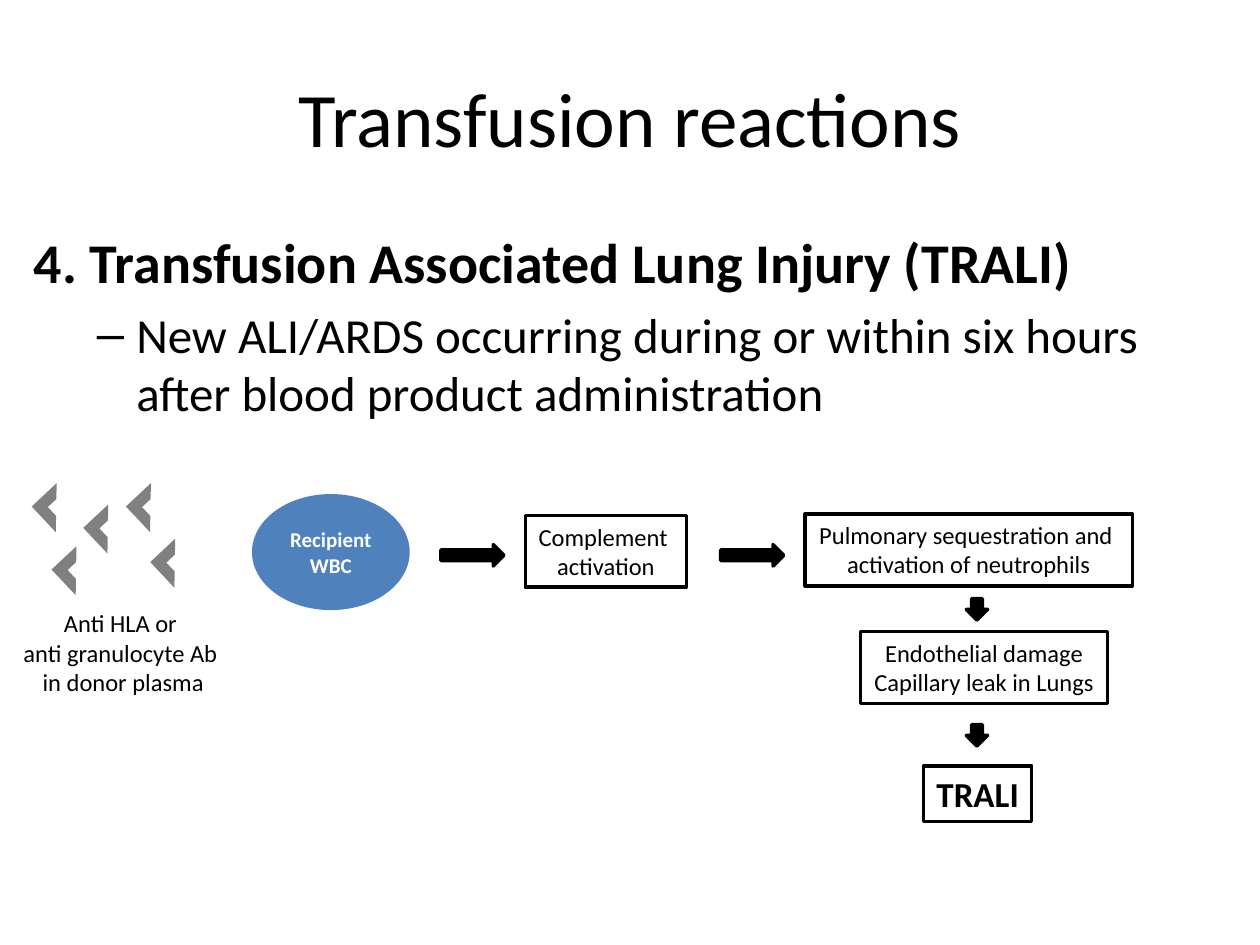
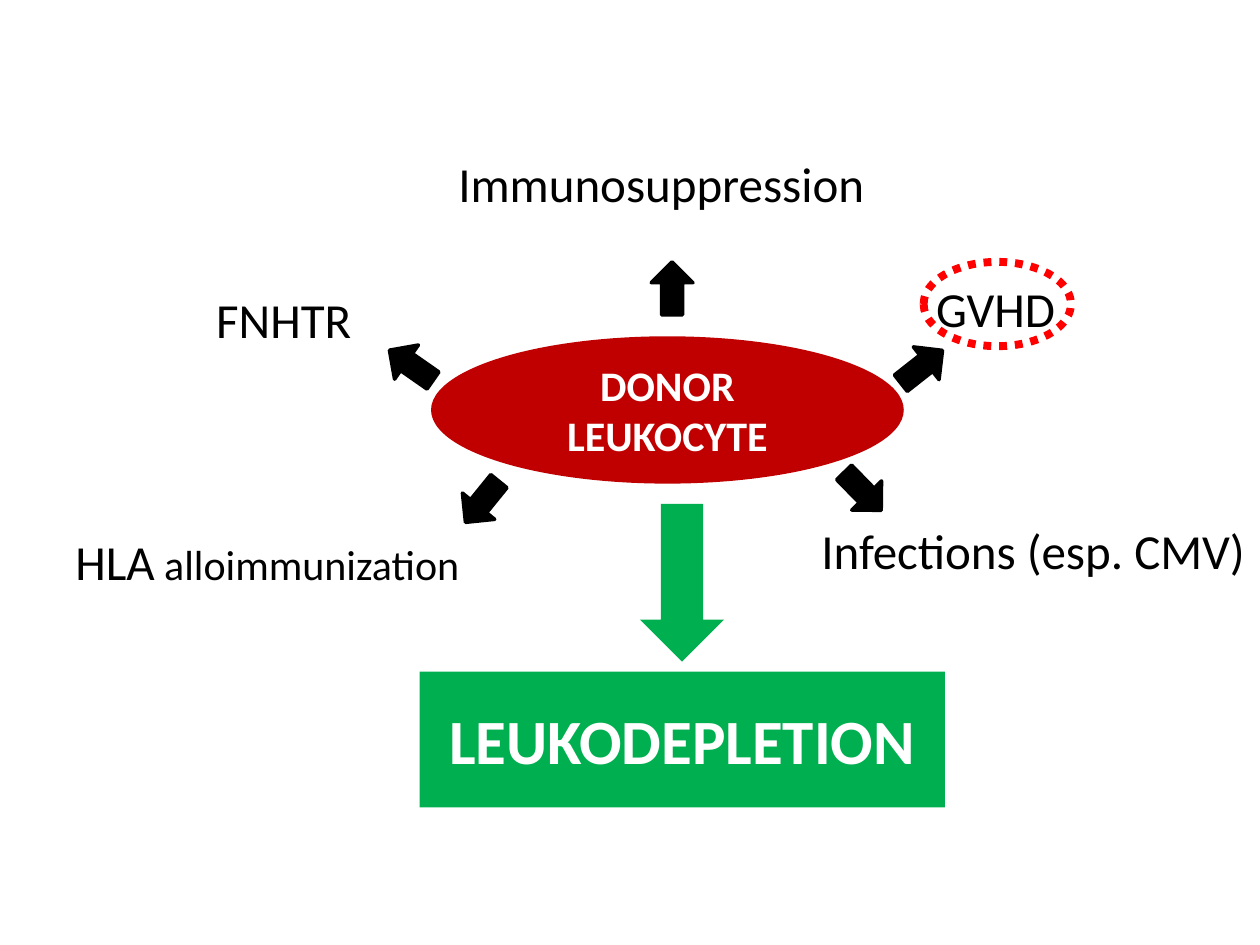
from lxml.etree import SubElement
from pptx import Presentation
from pptx.dml.color import RGBColor
from pptx.enum.dml import MSO_LINE
from pptx.enum.shapes import MSO_SHAPE
from pptx.enum.text import MSO_ANCHOR, PP_ALIGN
from pptx.oxml.ns import qn
from pptx.util import Cm, Pt

# Shared look
FONT = "Calibri"
BLACK, WHITE, GREY = "000000", "FFFFFF", "808080"
BLUE, DARK_RED, RED, GREEN = "4F81BD", "C00000", "FF0000", "00B050"
LINE_WIDTH = 2


def color(hex_code):
    return RGBColor.from_string(hex_code)


def place(box, left, top, width, height):
    """Lengths in centimetres for a part that sits inside a box."""
    return [Cm(n) for n in (box[0] + left, box[1] + top, width, height)]


def add_span(para, text, size, hex_code=BLACK, bold=False):
    span = para.add_run()
    span.text = text
    span.font.name = FONT
    span.font.size = Pt(size)
    span.font.bold = bold
    span.font.color.rgb = color(hex_code)


def write_lines(frame, lines, size, hex_code=BLACK, bold=False, align=PP_ALIGN.CENTER):
    for number, line in enumerate(lines):
        para = frame.add_paragraph() if number else frame.paragraphs[0]
        para.alignment = align
        add_span(para, line, size, hex_code, bold)


def add_figure(page, kind, area, fill=None, line=None, width=LINE_WIDTH, rotation=0):
    figure = page.shapes.add_shape(kind, *area)
    figure.shadow.inherit = False
    figure.rotation = rotation
    if fill:
        figure.fill.solid()
        figure.fill.fore_color.rgb = color(fill)
    else:
        figure.fill.background()
    if line:
        figure.line.color.rgb = color(line)
        figure.line.width = Pt(width)
    else:
        figure.line.fill.background()
    return figure


def add_arrow(page, kind, area, rotation=0):
    add_figure(page, kind, area, BLACK, BLACK, rotation=rotation)


def add_filled_label(page, kind, area, fill, text, size):
    figure = add_figure(page, kind, area, fill)
    frame = figure.text_frame
    frame.word_wrap = True
    frame.vertical_anchor = MSO_ANCHOR.MIDDLE
    write_lines(frame, [text], size, WHITE, True)


def add_step(page, area, lines, size=14, bold=False):
    figure = add_figure(page, MSO_SHAPE.RECTANGLE, area, WHITE, BLACK)
    frame = figure.text_frame
    frame.word_wrap = False
    frame.vertical_anchor = MSO_ANCHOR.TOP
    write_lines(frame, lines, size, bold=bold)


def add_label(page, area):
    frame = page.shapes.add_textbox(*area).text_frame
    frame.word_wrap = False
    return frame


# Heading and list in the layout's placeholders
def fill_heading(page, box, text):
    title = page.shapes.title
    title.left, title.top, title.width, title.height = place(box, 0, 0, *box[2:])
    title.text_frame.vertical_anchor = MSO_ANCHOR.MIDDLE
    write_lines(title.text_frame, [text], 44)


def fill_definition(page, box, heading, detail):
    body = page.placeholders[1]
    body.left, body.top, body.width, body.height = place(box, 0, 0, *box[2:])
    first = body.text_frame.paragraphs[0]
    SubElement(first._p.get_or_add_pPr(), qn("a:buNone"))
    add_span(first, heading, 32, bold=True)
    second = body.text_frame.add_paragraph()
    second.level = 1
    add_span(second, detail, 28)


# Donor antibodies with their caption
def draw_antibodies(page, box):
    spots = [(0.59, 0), (2.49, 0), (1.63, 0.43), (0.99, 1.27), (2.98, 1.12)]
    for left, top in spots:
        area = place(box, left, top, 0.69, 0.71)
        add_figure(page, MSO_SHAPE.HALF_FRAME, area, GREY, rotation=316.8)
    caption = add_label(page, place(box, 0, 2.26, box[2], 2.06))
    lines = ["Anti HLA or ", "anti granulocyte Ab ", "in donor plasma"]
    write_lines(caption, lines, 14)


# Chain of events from the recipient's cell to the injury
def draw_pathway(page, box):
    add_filled_label(page, MSO_SHAPE.OVAL, place(box, 0, 0.08, 3.18, 2.34),
                     BLUE, "Recipient WBC", 12)
    steps = [
        (5.51, 0.51, 3.25, ["Complement ", "activation"]),
        (11.15, 0.48, 6.6, ["Pulmonary sequestration and ", "activation of neutrophils"]),
        (12.27, 2.85, 4.98, ["Endothelial damage", "Capillary leak in Lungs"]),
    ]
    for left, top, width, lines in steps:
        add_step(page, place(box, left, top, width, 1.45), lines)
    add_step(page, place(box, 13.54, 5.56, 2.18, 1.12), ["TRALI"], 20, True)
    for left in (3.81, 9.45):
        add_arrow(page, MSO_SHAPE.RIGHT_ARROW, place(box, left, 1.1, 1.27, 0.43))
    for top in (2.19, 4.73):
        add_arrow(page, MSO_SHAPE.DOWN_ARROW, place(box, 14.4, top, 0.43, 0.43))


# Effects around the donor cell, and the remedy below it
def draw_effects(page, box):
    add_filled_label(page, MSO_SHAPE.OVAL, place(box, 7.42, 3.81, 9.53, 2.97),
                     DARK_RED, "DONOR LEUKOCYTE", 24)
    effects = [
        (2.84, 2.75, 3.28, [("FNHTR", 28)]),
        (17.35, 2.52, 2.95, [("GVHD", 28)]),
        (7.72, 0, 8.79, [("Immunosuppression", 28)]),
        (0, 7.62, 8.33, [("HLA", 28), (" alloimmunization", 24)]),
        (15.04, 7.39, 9.14, [("Infections (esp. CMV)", 28)]),
    ]
    for left, top, width, spans in effects:
        para = add_label(page, place(box, left, top, width, 1.45)).paragraphs[0]
        for text, size in spans:
            add_span(para, text, size)
    arrows = [(11.86, 2.31, 0), (6.6, 3.86, 304.9), (16.89, 3.89, 51.8),
              (15.7, 6.4, 135.7), (8.03, 6.61, 219.1)]
    for left, top, rotation in arrows:
        add_arrow(page, MSO_SHAPE.UP_ARROW, place(box, left, top, 0.84, 1.07), rotation)
    add_filled_label(page, MSO_SHAPE.RECTANGLE, place(box, 7.19, 10.57, 10.59, 2.74),
                     GREEN, "LEUKODEPLETION", 36)
    add_figure(page, MSO_SHAPE.DOWN_ARROW, place(box, 11.63, 7.19, 1.7, 3.18), GREEN)
    ring = add_figure(page, MSO_SHAPE.OVAL, place(box, 17.35, 2.31, 2.97, 1.7),
                      line=RED, width=4.5)
    ring.line.dash_style = MSO_LINE.ROUND_DOT


def build_reaction_page(deck):
    page = deck.slides.add_slide(deck.slide_layouts[1])
    fill_heading(page, (1.27, 0.76, 22.86, 3.18), "Transfusion reactions")
    fill_definition(
        page, (0.43, 4.45, 24.33, 13.77),
        "4. Transfusion Associated Lung Injury (TRALI)",
        "New ALI/ARDS occurring during or within six hours after blood product administration")
    draw_antibodies(page, (0.2, 9.88, 4.57, 4.32))
    draw_pathway(page, (5.08, 9.88, 17.75, 6.68))


def build_leukocyte_page(deck):
    page = deck.slides.add_slide(deck.slide_layouts[6])
    draw_effects(page, (1.27, 2.97, 24.18, 13.31))


def main():
    deck = Presentation()
    deck.slide_width, deck.slide_height = Cm(25.4), Cm(19.05)
    build_reaction_page(deck)
    build_leukocyte_page(deck)
    deck.save("out.pptx")


if __name__ == "__main__":
    main()
